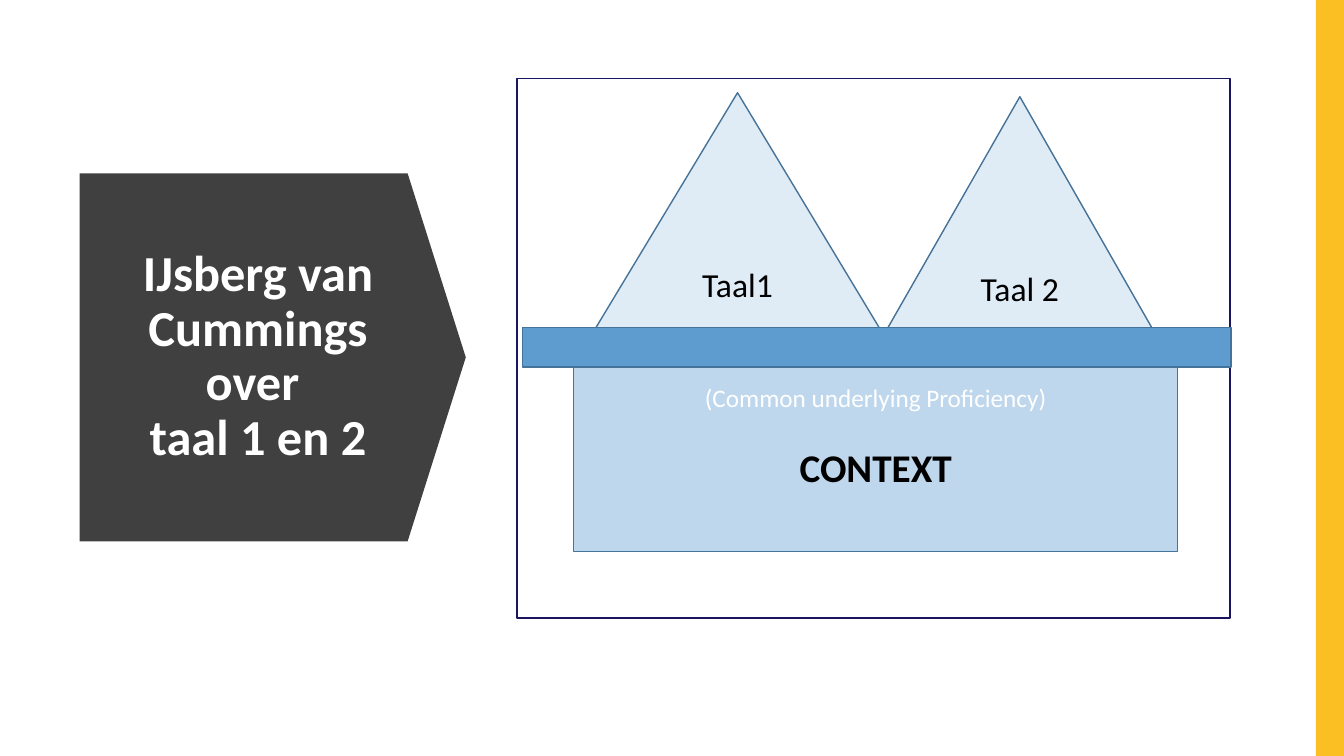
from pptx import Presentation
from pptx.dml.color import RGBColor
from pptx.enum.shapes import MSO_SHAPE
from pptx.enum.text import MSO_ANCHOR, MSO_AUTO_SIZE, PP_ALIGN
from pptx.util import Inches, Pt

COLORS = {
    "accent": "FBBF24", "arrow": "404040", "white": "FFFFFF", "black": "000000",
    "frame": "1A1563", "edge": "467399", "peak": "DFEBF5",
    "base": "BFD7EC", "water": "5E9BCF",
}


def color(name):
    """Return the palette colour with this name."""
    return RGBColor.from_string(COLORS[name])


def add_block(slide, kind, box, fill, edge=None):
    """Add a flat shape in a box of inches, with an optional outline."""
    block = slide.shapes.add_shape(kind, *map(Inches, box))
    block.shadow.inherit = False
    block.fill.solid()
    block.fill.fore_color.rgb = color(fill)
    if edge:
        block.line.color.rgb = color(edge)
        block.line.width = Pt(1)
    else:
        block.line.fill.background()
    return block


def style(paragraph, size, ink, bold=False):
    """Centre a paragraph and set its font."""
    paragraph.alignment = PP_ALIGN.CENTER
    paragraph.font.name = "Calibri"
    paragraph.font.size = Pt(size)
    paragraph.font.bold = bold
    paragraph.font.color.rgb = color(ink)


def add_title(slide, box):
    """Place the title on an arrow that fills the box."""
    left, top, width, height = box
    arrow = add_block(slide, MSO_SHAPE.PENTAGON, box, "arrow")
    arrow.adjustments[0] = 0.158
    title = slide.shapes.title
    title.element.addprevious(arrow.element)
    title.left, title.top = Inches(left + 0.33), Inches(top + 0.43)
    title.width, title.height = Inches(2.88), Inches(height - 0.86)
    frame = title.text_frame
    frame.text = "IJsberg van Cummings over \vtaal 1 en 2"
    frame.word_wrap = True
    frame.auto_size = MSO_AUTO_SIZE.NONE
    frame.vertical_anchor = MSO_ANCHOR.MIDDLE
    style(frame.paragraphs[0], 36, "white", bold=True)
    frame.paragraphs[0].line_spacing = 0.9


def add_peak(slide, box, label):
    """Add one labelled tip of the iceberg."""
    peak = add_block(slide, MSO_SHAPE.ISOSCELES_TRIANGLE, box, "peak", "edge")
    peak.text_frame.text = label
    peak.text_frame.vertical_anchor = MSO_ANCHOR.MIDDLE
    style(peak.text_frame.paragraphs[0], 24, "black")


def add_base(slide, box):
    """Add the shared part of the iceberg below the water."""
    base = add_block(slide, MSO_SHAPE.RECTANGLE, box, "base", "edge")
    frame = base.text_frame
    frame.vertical_anchor = MSO_ANCHOR.MIDDLE
    frame.margin_bottom = Inches(0.35)
    frame.text = "(Common underlying Proficiency)\nCONTEXT"
    proficiency, context = frame.paragraphs
    style(proficiency, 18, "white")
    style(context, 28, "black", bold=True)
    context.space_before = Pt(22)


def add_iceberg(slide, box):
    """Draw the framed iceberg: two peaks, the base and the waterline."""
    left, top, width, height = box
    add_block(slide, MSO_SHAPE.RECTANGLE, box, "white", "frame")
    add_peak(slide, (left + 0.66, top + 0.14, 3.05, 2.53), "Taal1")
    add_peak(slide, (left + 3.54, top + 0.18, 2.89, 2.53), "Taal 2")
    add_base(slide, (left + 0.56, top + 2.71, 5.99, 1.98))
    waterline = (left + 0.05, top + 2.47, width - 0.04, 0.39)
    add_block(slide, MSO_SHAPE.RECTANGLE, waterline, "water", "edge")


def main():
    """Build and save the slide."""
    deck = Presentation()
    deck.slide_width, deck.slide_height = Inches(13.33), Inches(7.5)
    slide = deck.slides.add_slide(deck.slide_layouts.get_by_name("Title Only"))
    add_block(slide, MSO_SHAPE.RECTANGLE, (13.05, 0, 0.28, 7.5), "accent")
    add_title(slide, (0.79, 1.72, 3.83, 3.65))
    add_iceberg(slide, (5.13, 0.78, 7.07, 5.35))
    deck.save("out.pptx")


if __name__ == "__main__":
    main()
